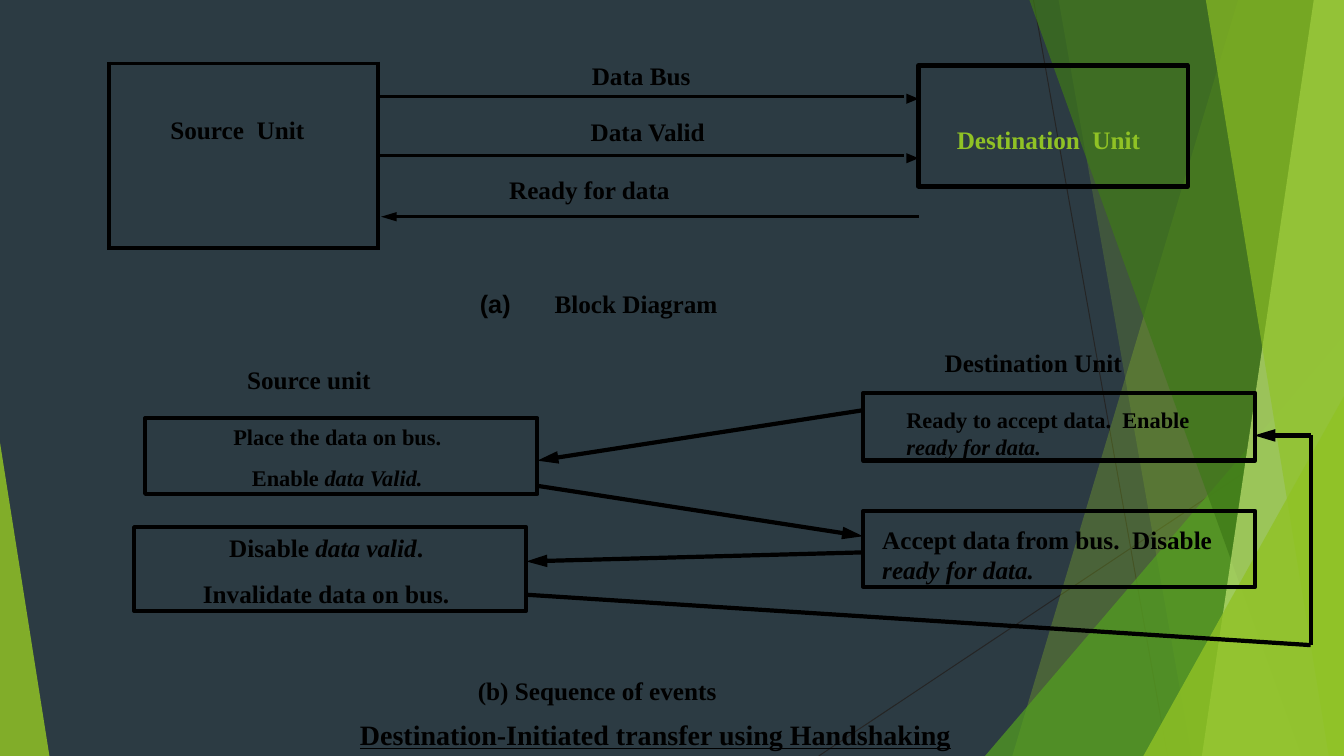
from lxml import etree
from pptx import Presentation
from pptx.dml.color import RGBColor
from pptx.enum import shapes, text
from pptx.oxml.ns import qn
from pptx.util import Inches, Pt

COLORS = {
    "slate": "2C3B43", "hairline": "252525", "black": "000000",
    "lime": "90C225", "leaf": "539F20", "forest": "3E7818", "pale": "C0E374",
}
SERIF = "Times New Roman"
W, H = 13.33, 7.5
FACETS = [
    ([(W, 0), (12.28, 0), (10.04, H), (W, H)], "lime", 30),
    ([(W, 0), (10.5, 0), (11.82, H), (W, H)], "lime", 20),
    ([(W, 3.33), (9.77, H), (W, H)], "leaf", 72),
    ([(W, 0), (10.21, 0), (12.91, H), (W, H)], "forest", 70),
    ([(W, 0), (13.03, 0), (11.92, H), (W, H)], "pale", 70),
    ([(W, 0), (11.96, 0), (13.18, H), (W, H)], "lime", 65),
    ([(W, 3.93), (11.34, H), (W, H)], "lime", 80),
    ([(0, 4.39), (0, H), (0.49, H)], "lime", 85),
]


def rgb(color):
    return RGBColor.from_string(COLORS[color])


def add_polygon(slide, points, color, opacity=100):
    corners = [(Inches(x), Inches(y)) for x, y in points]
    builder = slide.shapes.build_freeform(*corners[0], scale=1.0)
    builder.add_line_segments(corners[1:], close=True)
    polygon = builder.convert_to_shape()
    polygon.shadow.inherit = False
    polygon.line.fill.background()
    polygon.fill.solid()
    polygon.fill.fore_color.rgb = rgb(color)
    if opacity < 100:
        tint = polygon.fill._xPr.find(qn("a:solidFill"))[0]
        etree.SubElement(tint, qn("a:alpha"), val=str(opacity * 1000))


def add_line(slide, start, end, width=3, color="black", arrow=False):
    line = slide.shapes.add_connector(
        shapes.MSO_CONNECTOR.STRAIGHT, *map(Inches, start + end))
    line.line.color.rgb = rgb(color)
    line.line.width = Pt(width)
    if arrow:
        etree.SubElement(line.line._get_or_add_ln(), qn("a:tailEnd"),
                         type="triangle", w="med", len="lg")
    etree.SubElement(line._element.spPr, qn("a:effectLst"))


def write(frame, lines, size=18, color="black", align="LEFT", gap=0):
    for i, line in enumerate(lines):
        paragraph = frame.paragraphs[0] if i == 0 else frame.add_paragraph()
        paragraph.alignment = getattr(text.PP_ALIGN, align)
        paragraph.space_before = Pt(gap if i else 0)
        font = paragraph.font
        font.name, font.size, font.bold = SERIF, Pt(size), True
        font.color.rgb = rgb(color)
        for j, part in enumerate(line.split("*")):
            if part:
                run = paragraph.add_run()
                run.text = part
                if j % 2:
                    run.font.italic = True


def set_margins(holder, left=0, top=0, right=0):
    holder.margin_left, holder.margin_top = Inches(left), Inches(top)
    holder.margin_right, holder.margin_bottom = Inches(right), 0


def add_box(slide, place, lines, margins, **style):
    box = slide.shapes.add_shape(shapes.MSO_SHAPE.RECTANGLE, *map(Inches, place))
    box.shadow.inherit = False
    box.fill.background()
    box.line.color.rgb = rgb("black")
    box.line.width = Pt(3)
    frame = box.text_frame
    frame.word_wrap = True
    frame.vertical_anchor = text.MSO_ANCHOR.TOP
    set_margins(frame, *margins)
    write(frame, lines, **style)


def add_label(slide, place, lines, margins=(0.01, 0.01), **style):
    frame = slide.shapes.add_textbox(*map(Inches, place)).text_frame
    frame.word_wrap = True
    set_margins(frame, *margins)
    write(frame, lines, **style)
    return frame


def set_borders(cell, **widths):
    properties = cell._tc.get_or_add_tcPr()
    for side in "LRTB":
        width = widths.get(side, 0)
        edge = etree.SubElement(properties, qn("a:ln" + side), w=str(Pt(width)))
        if width:
            fill = etree.SubElement(edge, qn("a:solidFill"))
            etree.SubElement(fill, qn("a:srgbClr"), val=COLORS["black"])
        else:
            etree.SubElement(edge, qn("a:noFill"))
    cell.fill.background()


def add_signal_table(slide):
    table = slide.shapes.add_table(
        3, 2, *map(Inches, (1.08, 0.63, 7.89, 1.83))).table
    table.first_row = table.horz_banding = False
    for column, width in zip(table.columns, (2.67, 5.22)):
        column.width = Inches(width)
    for row, height in zip(table.rows, (0.33, 0.58, 0.92)):
        row.height = Inches(height)
    table.cell(0, 0).merge(table.cell(2, 0))
    signals = [
        ("Data Bus", "CENTER", (0, 0), {"B": 2.25}),
        ("Data Valid", "CENTER", (0.13, 0.22), {"T": 2.25, "B": 2.25}),
        ("Ready for data", "LEFT", (1.3, 0.22), {"T": 2.25}),
    ]
    for row, (signal, align, margins, edges) in enumerate(signals):
        set_borders(table.cell(row, 0), L=3, R=3, T=3, B=3)
        cell = table.cell(row, 1)
        set_borders(cell, L=3, **edges)
        set_margins(cell, *margins)
        write(cell.text_frame, [signal], align=align)
    source = table.cell(0, 0)
    set_margins(source, 0.61, 0.53)
    write(source.text_frame, ["Source  Unit"])


def add_backdrop(slide):
    slide.background.fill.solid()
    slide.background.fill.fore_color.rgb = rgb("slate")
    add_line(slide, (10.25, 0), (11.58, H), 0.72, "hairline")
    add_line(slide, (W, 4.03), (8.12, H), 0.72, "hairline")
    for points, color, opacity in FACETS:
        add_polygon(slide, points, color, opacity)


def add_block_diagram(slide):
    for y in (0.98, 1.57):
        add_polygon(slide, [(8.99, y - 0.05), (8.99, y + 0.05), (9.11, y)], "black")
    add_line(slide, (9.11, 2.15), (3.78, 2.15), 2.2, arrow=True)
    add_signal_table(slide)
    add_box(slide, (9.11, 0.65, 2.67, 1.2), ["Destination  Unit"],
            (0.38, 0.58), color="lime")
    caption = add_label(slide, (4.75, 2.85, 3.16, 0.33), ["(a)\tBlock Diagram"])
    paragraph = caption.paragraphs[0]
    stops = etree.Element(qn("a:tabLst"))
    etree.SubElement(stops, qn("a:tab"), pos=str(Inches(0.74)), algn="l")
    paragraph._p.pPr.find(qn("a:defRPr")).addprevious(stops)
    paragraph.runs[0].text = "(a)"
    paragraph.runs[0].font.name = "Arial"
    paragraph.add_run().text = "\tBlock Diagram"


def add_sequence(slide):
    centered = {"align": "CENTER"}
    add_box(slide, (1.44, 4.15, 3.89, 0.75),
            ["Place the data on bus.", "Enable *data Valid.*"],
            (0, 0.05, 0.08), size=16, gap=9.9, **centered)
    add_box(slide, (8.56, 3.9, 3.89, 0.67),
            ["Ready to accept data.  Enable *ready for data.*"],
            (0.43, 0.13, 0.5), size=16)
    add_box(slide, (1.33, 5.23, 3.89, 0.83),
            ["Disable *data valid*.", "Invalidate data on bus."],
            (0, 0.05, 0.08), gap=11.2, **centered)
    add_box(slide, (8.56, 5.07, 3.89, 0.75),
            ["Accept data from bus.  Disable *ready for data.*"],
            (0.19, 0.13, 0.3))
    add_label(slide, (2.44, 3.6, 1.68, 0.33), ["Source unit"])
    add_label(slide, (9.36, 3.44, 2.38, 0.33), ["Destination Unit"])
    add_line(slide, (8.56, 4.07), (5.33, 4.57), arrow=True)
    add_line(slide, (5.33, 4.82), (8.56, 5.32), arrow=True)
    add_line(slide, (8.56, 5.48), (5.22, 5.57), arrow=True)
    add_line(slide, (5.22, 5.9), (13, 6.4))
    add_line(slide, (13, 6.4), (13, 4.32))
    add_line(slide, (13, 4.32), (12.44, 4.32), arrow=True)


def add_captions(slide):
    frame = add_label(
        slide, (3.56, 6.58, 7.86, 0.88),
        ["(b) Sequence of events",
         "Destination-Initiated transfer using Handshaking"],
        (0.01, 0.12), gap=8.4)
    events, title = frame.paragraphs
    events._p.pPr.set("marL", str(Inches(1.17)))
    title.font.size = Pt(20)
    title.font.underline = True


def main():
    deck = Presentation()
    deck.slide_width, deck.slide_height = Inches(W), Inches(H)
    slide = deck.slides.add_slide(deck.slide_layouts[6])
    add_backdrop(slide)
    add_block_diagram(slide)
    add_sequence(slide)
    add_captions(slide)
    deck.save("out.pptx")


if __name__ == "__main__":
    main()
